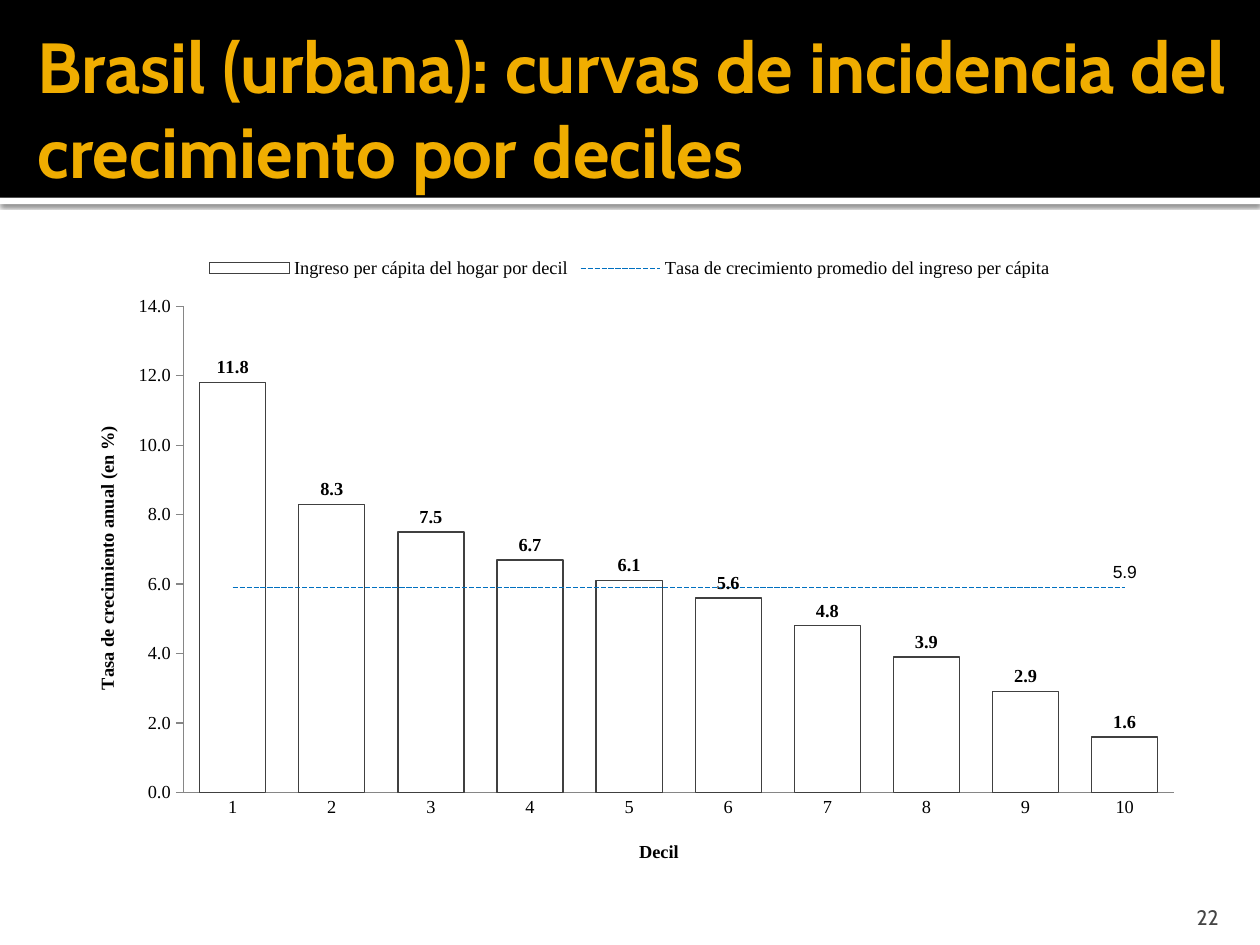
from lxml import etree
from pptx import Presentation
from pptx.chart.data import CategoryChartData as ChartData
from pptx.dml.color import RGBColor
from pptx.enum.chart import XL_CHART_TYPE as Kind, XL_LABEL_POSITION as Spot
from pptx.enum.chart import XL_LEGEND_POSITION as Side, XL_MARKER_STYLE as Mark
from pptx.enum.chart import XL_TICK_MARK as Tick
from pptx.enum.dml import MSO_LINE as Dash
from pptx.enum.shapes import MSO_SHAPE as Form
from pptx.enum.text import MSO_ANCHOR as Anchor, PP_ALIGN as Align
from pptx.oxml import parse_xml
from pptx.oxml.ns import nsdecls, qn
from pptx.util import Inches, Pt

BLACK = RGBColor(0x00, 0x00, 0x00)
WHITE = RGBColor(0xFF, 0xFF, 0xFF)
GOLD = RGBColor(0xF0, 0xAD, 0x00)
DARK = RGBColor(0x40, 0x40, 0x40)
SLATE = RGBColor(0x45, 0x45, 0x45)
GRAY = RGBColor(0x86, 0x86, 0x86)
BLUE = RGBColor(0x00, 0x70, 0xC0)

RATES = [11.8, 8.3, 7.5, 6.7, 6.1, 5.6, 4.8, 3.9, 2.9, 1.6]
MEAN = 5.9


def put(item, **vals):
    """Set each named attribute; 'color' goes to item.color.rgb."""
    for name, val in vals.items():
        if name == "color":
            item.color.rgb = val
        else:
            setattr(item, name, val)


def add_bar(slide, box, color):
    bar = slide.shapes.add_shape(Form.RECTANGLE, *map(Inches, box))
    bar.shadow.inherit = False
    bar.fill.solid()
    bar.fill.fore_color.rgb = color
    bar.line.fill.background()
    return bar


def add_text(slide, box, text, font, frame, align):
    area = slide.shapes.add_textbox(*map(Inches, box)).text_frame
    put(area, word_wrap=True, margin_left=Inches(0.1), **frame)
    para = area.paragraphs[0]
    para.alignment = align
    run = para.add_run()
    run.text = text
    put(run.font, name="Cabin", **font)


def add_head(slide, box):
    left, top, width, height = box
    strip = add_bar(slide, (left, top + height, width, 0.05), WHITE)
    glow = strip._element.spPr.find(qn("a:effectLst"))
    glow.append(parse_xml(
        f'<a:outerShdw {nsdecls("a")} blurRad="31750" dist="10160" dir="5400000"'
        ' algn="tl" rotWithShape="0"><a:srgbClr val="000000">'
        '<a:alpha val="60000"/></a:srgbClr></a:outerShdw>'))
    add_bar(slide, box, BLACK)
    edge = Inches(0.05)
    add_text(slide, (left + 0.2, top + 0.17, width - 0.2, height - 0.2),
             "Brasil (urbana): curvas de incidencia del crecimiento por deciles",
             dict(size=Pt(40.5), bold=True, color=GOLD),
             dict(vertical_anchor=Anchor.MIDDLE, margin_right=edge,
                  margin_top=edge, margin_bottom=edge), Align.LEFT)


def lay_out(part, inner=False, **spots):
    """Place a chart part by fractions of the chart's size."""
    for old in part.findall(qn("c:layout")):
        part.remove(old)
    rows = '<c:layoutTarget val="inner"/>' if inner else ""
    rows += "".join(f'<c:{key}Mode val="edge"/>' for key in "xy")
    rows += "".join(f'<c:{key} val="{val}"/>' for key, val in spots.items())
    box = parse_xml(f'<c:layout {nsdecls("c")}><c:manualLayout>{rows}'
                    '</c:manualLayout></c:layout>')
    text = part.find(qn("c:tx"))
    part.insert(0 if text is None else part.index(text) + 1, box)


def split_line(chart):
    """Move the second column series to a line plot on the same axes."""
    bars = chart.plots[0]._element
    row = bars.findall(qn("c:ser"))[1]
    for flag in row.findall(qn("c:invertIfNegative")):
        row.remove(flag)
    line = parse_xml(f'<c:lineChart {nsdecls("c")}><c:grouping val="standard"/>'
                     '<c:varyColors val="0"/></c:lineChart>')
    line.append(row)
    etree.SubElement(line, qn("c:marker")).set("val", "1")
    for axis in bars.findall(qn("c:axId")):
        etree.SubElement(line, qn("c:axId")).set("val", axis.get("val"))
    bars.addnext(line)


def style_axis(axis, title, tick, x, y):
    put(axis, has_major_gridlines=False, major_tick_mark=tick,
        minor_tick_mark=Tick.NONE)
    put(axis.format.line, color=GRAY, width=Pt(0.75))
    head = axis.axis_title
    head.text_frame.text = title
    put(head.text_frame.paragraphs[0].runs[0].font, size=Pt(10.5), bold=True,
        name="Times New Roman", color=BLACK)
    lay_out(head._element, x=x, y=y)


def add_graph(slide, box):
    data = ChartData(number_format="0.0")
    data.categories = [str(n + 1) for n in range(len(RATES))]
    data.add_series("Ingreso per cápita del hogar por decil", RATES)
    data.add_series("Tasa de crecimiento promedio del ingreso per cápita",
                    [MEAN] * len(RATES))
    chart = slide.shapes.add_chart(Kind.COLUMN_CLUSTERED, *map(Inches, box),
                                   data).chart
    put(chart, has_title=False, has_legend=True)
    put(chart.legend, position=Side.TOP, include_in_layout=False)
    put(chart.font, name="Times New Roman", size=Pt(10.5), color=BLACK)
    split_line(chart)
    lay_out(chart._chartSpace.chart.plotArea, inner=True,
            x=0.106, y=0.097, w=0.874, h=0.763)

    style_axis(chart.category_axis, "Decil", Tick.NONE, 0.505, 0.93)
    scale = chart.value_axis
    style_axis(scale, "Tasa de crecimiento anual (en %)", Tick.OUTSIDE,
               0.026, 0.28)
    put(scale, minimum_scale=0, maximum_scale=14, major_unit=2)
    put(scale.tick_labels, number_format="#,##0.0",
        number_format_is_linked=False)

    cols, line = chart.plots
    put(cols, gap_width=50, vary_by_categories=False)
    bars = cols.series[0]
    bars.format.fill.solid()
    bars.format.fill.fore_color.rgb = WHITE
    put(bars.format.line, color=DARK, width=Pt(0.75))
    tags = bars.data_labels
    put(tags, show_value=True, position=Spot.OUTSIDE_END,
        number_format="0.0", number_format_is_linked=False)
    put(tags.font, bold=True, size=Pt(10.5), color=BLACK)

    mean = line.series[0]
    mean.smooth = False
    mean.marker.style = Mark.NONE
    put(mean.format.line, color=BLUE, width=Pt(1), dash_style=Dash.SQUARE_DOT)
    mean.data_labels.show_value = False
    tag = mean.points[len(RATES) - 1].data_label
    put(tag.font, name="Arial", size=Pt(10), color=BLACK)
    tag.position = Spot.ABOVE


def add_number(slide, box):
    add_text(slide, box, "22", dict(size=Pt(12), color=SLATE),
             dict(vertical_anchor=Anchor.BOTTOM, margin_right=Inches(0.1),
                  margin_top=Inches(0.05), margin_bottom=0), Align.RIGHT)


def main():
    deck = Presentation()
    put(deck, slide_width=Inches(10), slide_height=Inches(7.5))
    slide = deck.slides.add_slide(deck.slide_layouts[6])
    add_head(slide, (0, 0, 10, 1.57))
    add_graph(slide, (0.5, 1.94, 9, 5.06))
    add_number(slide, (8.97, 7.08, 0.8, 0.3))
    deck.save("out.pptx")


if __name__ == "__main__":
    main()
